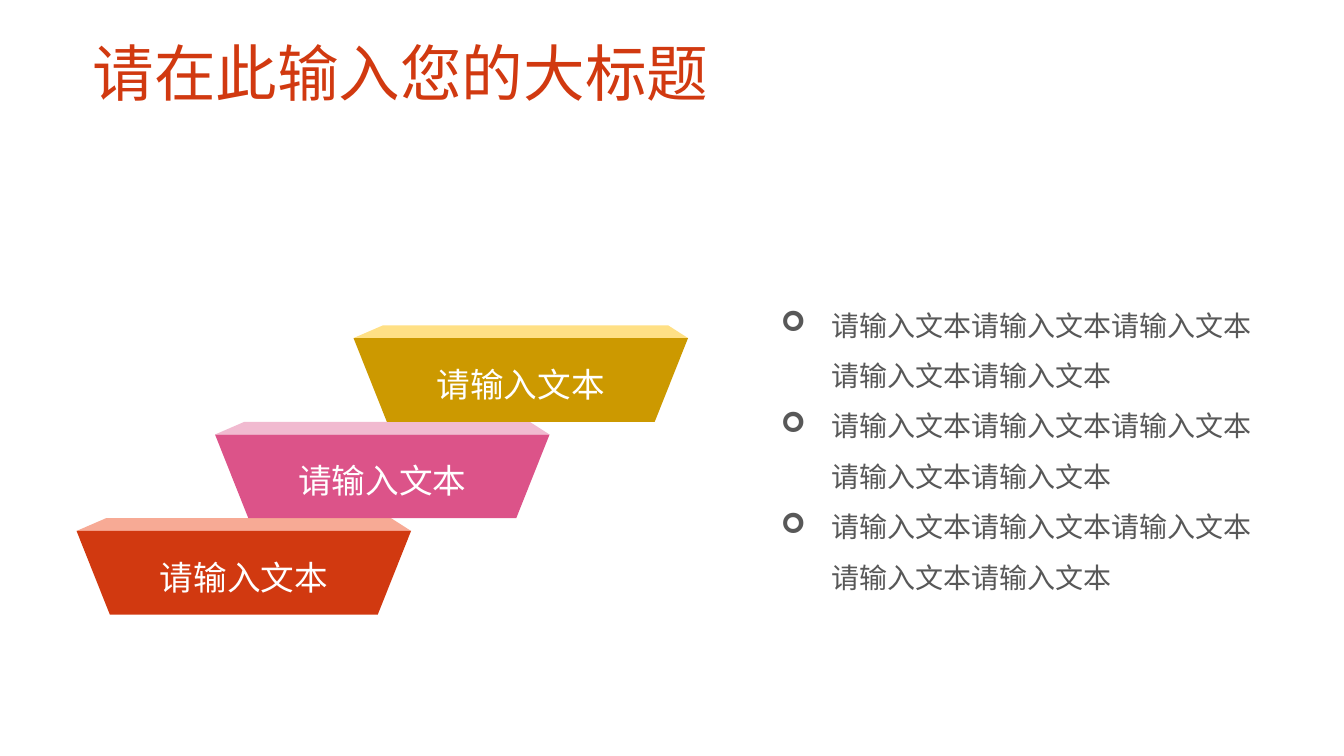
from lxml import etree
from pptx import Presentation
from pptx.dml.color import RGBColor
from pptx.enum.text import MSO_ANCHOR as Anchor, PP_ALIGN as Align
from pptx.oxml.ns import qn
from pptx.util import Cm, Pt

FONT = "Noto Sans CJK SC"


def color(hex_value):
    return RGBColor.from_string(hex_value)


def write(paragraph, text, size, hex_value, spacing):
    paragraph.line_spacing = spacing
    run = paragraph.add_run()
    run.text = text
    run.font.size = Pt(size)
    run.font.color.rgb = color(hex_value)
    run.font.name = FONT
    etree.SubElement(run.font._element, qn("a:ea")).set("typeface", FONT)


deck = Presentation()
deck.slide_width, deck.slide_height = Cm(33.87), Cm(19.05)
slide = deck.slides.add_slide(deck.slide_layouts[6])
shapes = slide.shapes

title = shapes.add_textbox(Cm(2.08), Cm(0.3), Cm(29.67), Cm(2.6)).text_frame
title.word_wrap = True
title.vertical_anchor = Anchor.BOTTOM
write(title.paragraphs[0], "请在此输入您的大标题", 44, "D13910", 0.9)

LEFT, TOP = 1.93, 13.06
STEP_X, STEP_Y = 3.49, 2.43
WIDTH, LID, BODY = 8.43, 0.32, 2.11
LID_OUTLINE = [(0.74, 0), (7.93, 0), (WIDTH, LID), (0, LID)]
BODY_OUTLINE = [(0, LID), (WIDTH, LID), (7.59, LID + BODY), (0.84, LID + BODY)]

steps = [("F7AA95", "D13910"), ("F1BAD0", "DC5389"), ("FFE085", "CC9900")]
for level, (lid_color, body_color) in enumerate(steps):
    left, top = LEFT + level * STEP_X, TOP - level * STEP_Y
    for outline, fill in ((LID_OUTLINE, lid_color), (BODY_OUTLINE, body_color)):
        corners = [(Cm(left + x), Cm(top + y)) for x, y in outline]
        builder = shapes.build_freeform(*corners[0])
        builder.add_line_segments(corners[1:], close=True)
        face = builder.convert_to_shape()
        face.shadow.inherit = False
        face.fill.solid()
        face.fill.fore_color.rgb = color(fill)
        face.line.fill.background()
    label = face.text_frame
    label.word_wrap = True
    label.vertical_anchor = Anchor.MIDDLE
    label.margin_left = label.margin_right = Cm(1.19)
    label.paragraphs[0].alignment = Align.CENTER
    write(label.paragraphs[0], "请输入文本", 24, "FFFFFF", 1.2)

details = shapes.add_textbox(Cm(19.43), Cm(4.7), Cm(12.78), Cm(12.9)).text_frame
details.word_wrap = True
details.vertical_anchor = Anchor.MIDDLE
for number in range(3):
    item = details.add_paragraph() if number else details.paragraphs[0]
    properties = item._p.get_or_add_pPr()
    properties.set("marL", str(Cm(1.27)))
    properties.set("indent", str(-Cm(1.27)))
    etree.SubElement(properties, qn("a:buFont")).set("typeface", "Wingdings")
    etree.SubElement(properties, qn("a:buChar")).set("char", "➢")
    write(item, "请输入文本" * 5, 20, "585858", 1.5)

deck.save("out.pptx")
